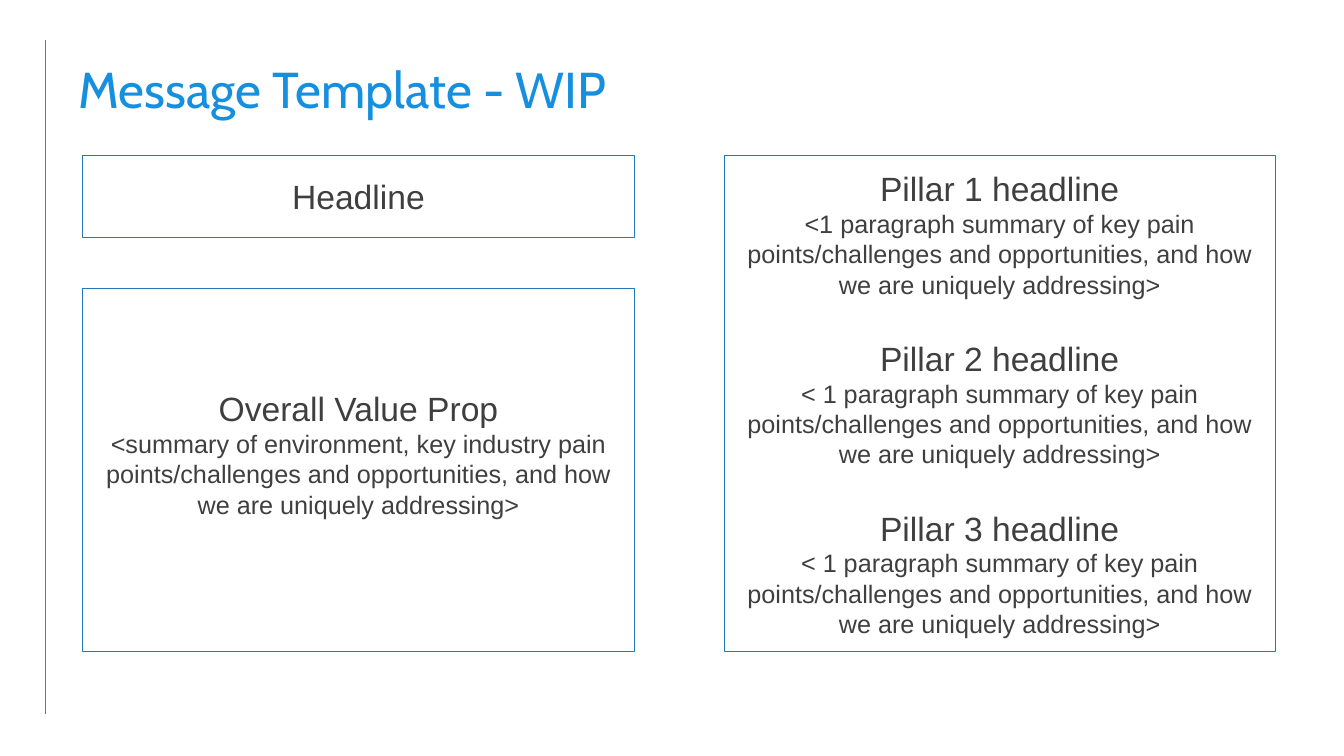
from pptx import Presentation
from pptx.dml.color import RGBColor
from pptx.enum.shapes import MSO_CONNECTOR, MSO_SHAPE
from pptx.enum.text import MSO_ANCHOR, PP_ALIGN
from pptx.oxml.ns import qn
from pptx.util import Inches, Pt

TITLE = "Message Template - WIP"
SUMMARY = "points/challenges and opportunities, and how we are uniquely addressing>"
HEADLINE = [("Headline", None)]
VALUE_PROP = [("Overall Value Prop", "<summary of environment, key industry pain " + SUMMARY)]
PILLARS = [
    ("Pillar 1 headline", "<1 paragraph summary of key pain " + SUMMARY),
    ("Pillar 2 headline", "< 1 paragraph summary of key pain " + SUMMARY),
    ("Pillar 3 headline", "< 1 paragraph summary of key pain " + SUMMARY),
]

BLUE, EDGE, INK = "168FDF", "2578BC", "3F3F3F"
LEFT, RIGHT, COLUMN = 0.82, 7.18, 5.47
TOP, BOTTOM = 1.54, 6.46
HEADLINE_HEIGHT, ROW_GAP = 0.81, 0.51
SECTION_GAP = 27.6


def color(value):
    """Turn a hex string into a colour."""
    return RGBColor.from_string(value)


def write(frame, text, size=18, font="Arial", ink=INK, align=PP_ALIGN.CENTER,
          before=0, spacing=None, first=False):
    """Put one formatted paragraph into a text frame."""
    para = frame.paragraphs[0] if first else frame.add_paragraph()
    para.alignment = align
    para.line_spacing = spacing
    if before:
        para.space_before = Pt(before)
    span = para.add_run()
    span.text = text
    span.font.size = Pt(size)
    span.font.name = font
    span.font.color.rgb = color(ink)


def add_panel(page, sections, left, top, height, bottom_inset=0.05):
    """Draw an outlined panel with a heading and summary for each section."""
    box = page.shapes.add_shape(MSO_SHAPE.RECTANGLE, Inches(left), Inches(top),
                                Inches(COLUMN), Inches(height))
    box.shadow.inherit = False
    box.fill.background()
    box.line.color.rgb = color(EDGE)
    box.line.width = Pt(0.25)
    frame = box.text_frame
    frame.word_wrap = True
    frame.vertical_anchor = MSO_ANCHOR.MIDDLE
    frame.margin_bottom = Inches(bottom_inset)
    for index, (heading, summary) in enumerate(sections):
        write(frame, heading, size=24, first=index == 0,
              before=SECTION_GAP if index else 0)
        if summary:
            write(frame, summary)


def add_rule(page):
    """Draw the vertical rule beside the content."""
    rule = page.shapes.add_connector(MSO_CONNECTOR.STRAIGHT, Inches(0.45), Inches(0.4),
                                     Inches(0.45), Inches(7.08))
    rule.line.color.rgb = color(BLUE)
    rule.line.width = Pt(0.75)
    properties = rule._element.spPr
    properties.append(properties.makeelement(qn("a:effectLst"), {}))


def add_title(page):
    """Write the slide title."""
    box = page.shapes.add_textbox(Inches(0.68), Inches(0.4), Inches(11.96), Inches(1.02))
    frame = box.text_frame
    frame.word_wrap = True
    frame.vertical_anchor = MSO_ANCHOR.MIDDLE
    write(frame, TITLE, size=36, font="Cabin", ink=BLUE, align=PP_ALIGN.LEFT,
          spacing=0.9, first=True)


def main():
    """Build and save the slide."""
    deck = Presentation()
    deck.slide_width, deck.slide_height = Inches(13.33), Inches(7.5)
    page = deck.slides.add_slide(deck.slide_layouts[6])
    add_rule(page)
    add_title(page)
    add_panel(page, HEADLINE, LEFT, TOP, HEADLINE_HEIGHT)
    value_top = TOP + HEADLINE_HEIGHT + ROW_GAP
    add_panel(page, VALUE_PROP, LEFT, value_top, BOTTOM - value_top, bottom_inset=0.37)
    add_panel(page, PILLARS, RIGHT, TOP, BOTTOM - TOP)
    deck.save("out.pptx")


if __name__ == "__main__":
    main()
